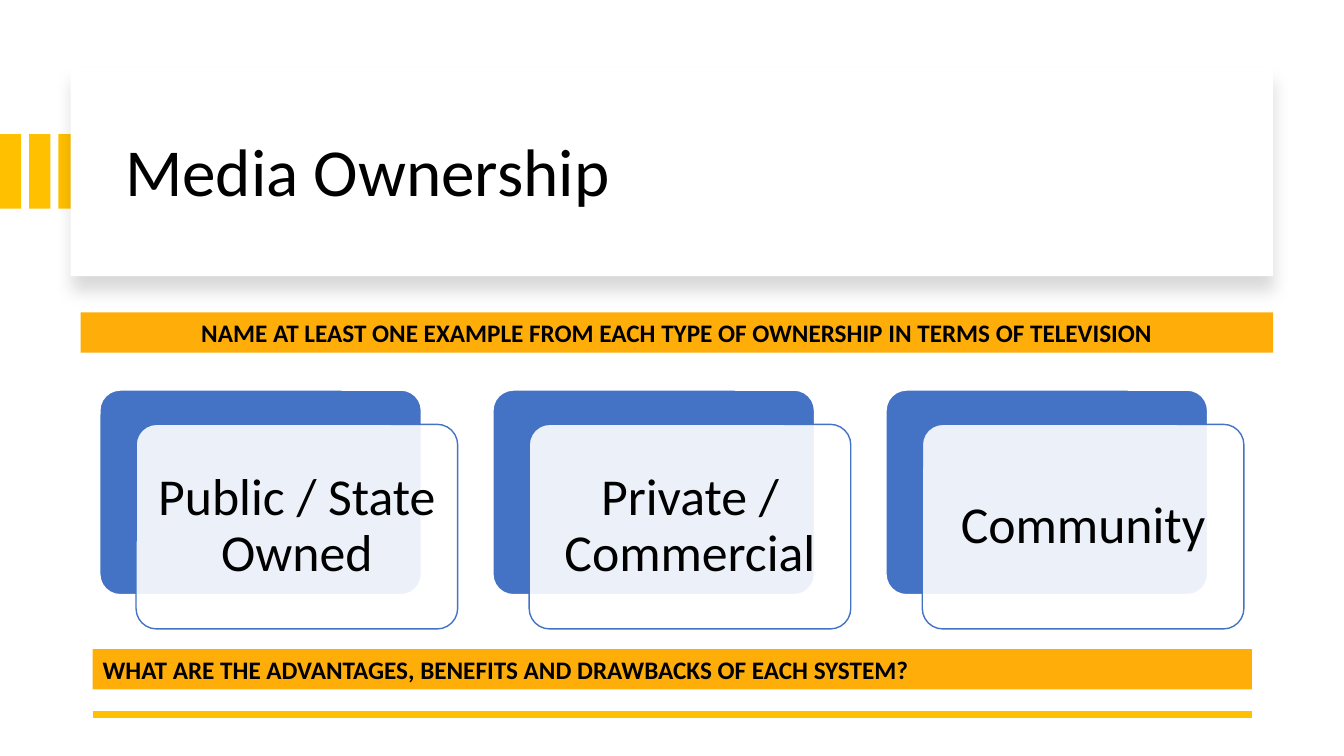
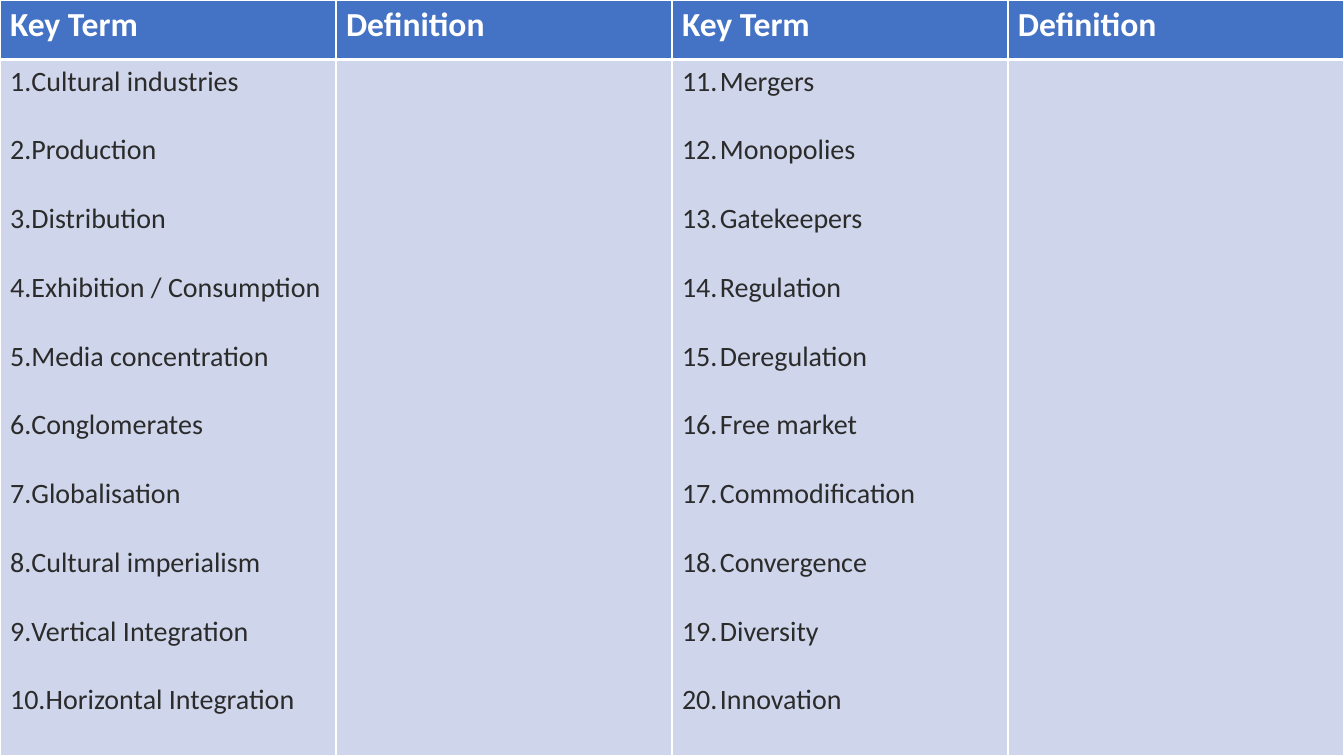
from lxml.etree import SubElement
from pptx import Presentation
from pptx.dml.color import RGBColor
from pptx.enum.shapes import MSO_CONNECTOR, MSO_SHAPE
from pptx.enum.text import MSO_ANCHOR, MSO_AUTO_SIZE, PP_ALIGN
from pptx.oxml.ns import qn
from pptx.util import Inches, Pt

FONT = "Calibri"
COLORS = {
    "white": "FFFFFF",
    "black": "000000",
    "gold": "FFC000",
    "amber": "FFAD09",
    "blue": "4472C4",
    "pale_blue": "CFD5EA",
    "charcoal": "2B2B2B",
}
SLIDE_WIDTH, SLIDE_HEIGHT = 40 / 3, 7.5

OWNERSHIP_TYPES = ["Public / State Owned", "Private / Commercial", "Community"]
HEADINGS = ["Key Term", "Definition"] * 2
KEY_TERMS = [
    "Cultural industries", "Production", "Distribution",
    "Exhibition / Consumption", "Media concentration", "Conglomerates",
    "Globalisation", "Cultural imperialism", "Vertical Integration",
    "Horizontal Integration", "Mergers", "Monopolies", "Gatekeepers",
    "Regulation", "Deregulation", "Free market", "Commodification",
    "Convergence", "Diversity", "Innovation",
]


def rgb(name):
    return RGBColor.from_string(COLORS[name])


def add_xml(parent, tag, **attributes):
    """Append a DrawingML child element."""
    return SubElement(parent, qn(tag), {key: str(value) for key, value in attributes.items()})


def number_paragraph(paragraph, start, hanging):
    """Number a paragraph, with its hanging indent in points."""
    properties = paragraph._p.get_or_add_pPr()
    properties.set("marL", str(Pt(hanging)))
    properties.set("indent", str(-Pt(hanging)))
    add_xml(properties, "a:buAutoNum", type="arabicPeriod", startAt=start)


def write_text(frame, text, size=18, color="black", bold=False,
               align=PP_ALIGN.LEFT, line_spacing=None, gap=0,
               number_from=None, hanging=0):
    """Write one paragraph, or a list of paragraphs, into a text frame."""
    frame.word_wrap = True
    lines = [text] if isinstance(text, str) else text
    for index, line in enumerate(lines):
        paragraph = frame.add_paragraph() if index else frame.paragraphs[0]
        if number_from:
            number_paragraph(paragraph, number_from, hanging)
        paragraph.alignment = align
        if line_spacing:
            paragraph.line_spacing = line_spacing
        if index and gap:
            paragraph.space_before = Pt(gap)
        run = paragraph.add_run()
        run.text = line
        run.font.name = FONT
        run.font.size = Pt(size)
        run.font.bold = bold
        run.font.color.rgb = rgb(color)


def add_box(slide, left, top, width, height, fill, line=None,
            kind=MSO_SHAPE.RECTANGLE):
    shape = slide.shapes.add_shape(
        kind, Inches(left), Inches(top), Inches(width), Inches(height))
    shape.shadow.inherit = False
    shape.fill.solid()
    shape.fill.fore_color.rgb = rgb(fill)
    if line:
        shape.line.color.rgb = rgb(line)
        shape.line.width = Pt(1)
    else:
        shape.line.fill.background()
    return shape


def set_alpha(color_element, percent):
    add_xml(color_element, "a:alpha", val=percent * 1000)


def add_title(slide, text):
    """Title on a white panel with a soft shadow below it."""
    panel = add_box(slide, 0.7, 0.67, 11.93, 2.07, "white")
    effects = panel._element.spPr.find(qn("a:effectLst"))
    shadow = add_xml(effects, "a:outerShdw", blurRad=Pt(11), dist=Pt(10),
                     dir=90 * 60000, algn="t", rotWithShape=0)
    set_alpha(add_xml(shadow, "a:srgbClr", val=COLORS["black"]), 15)

    title = slide.shapes.title
    title.left, title.top = Inches(1.14), Inches(0.88)
    title.width, title.height = Inches(11.13), Inches(1.7)
    title.text_frame.auto_size = MSO_AUTO_SIZE.NONE
    title.text_frame.vertical_anchor = MSO_ANCHOR.MIDDLE
    write_text(title.text_frame, text, size=48, line_spacing=0.9)
    slide.shapes._spTree.append(title._element)  # bring in front of the panel


def add_band(slide, left, top, width, text, align=PP_ALIGN.LEFT):
    band = add_box(slide, left, top, width, 0.4, "amber")
    band.text_frame.vertical_anchor = MSO_ANCHOR.MIDDLE
    write_text(band.text_frame, text, bold=True, align=align)


def add_rule(slide, left, right, top):
    rule = slide.shapes.add_connector(
        MSO_CONNECTOR.STRAIGHT, Inches(left), Inches(top), Inches(right), Inches(top))
    rule.line.color.rgb = rgb("gold")
    rule.line.width = Pt(4.5)
    add_xml(rule._element.spPr, "a:effectLst")


def add_layered_card(slide, left, top, text):
    """Blue card with a translucent labelled card shifted over it."""
    width, height = 3.19, 2.03
    back = add_box(slide, left, top, width, height, "blue", "white",
                   MSO_SHAPE.ROUNDED_RECTANGLE)
    front = add_box(slide, left + 0.36, top + 0.34, width, height, "white", "blue",
                    MSO_SHAPE.ROUNDED_RECTANGLE)
    for card in (back, front):
        card.adjustments[0] = 0.1
    set_alpha(front._element.spPr.find(qn("a:solidFill"))[0], 90)
    frame = front.text_frame
    frame.margin_left = frame.margin_right = Inches(0.14)
    frame.vertical_anchor = MSO_ANCHOR.MIDDLE
    write_text(frame, text, size=37, align=PP_ALIGN.CENTER, line_spacing=0.9)


def format_cell(cell, fill, top=1, bottom=1):
    """White borders (widths in points) and a solid fill."""
    properties = cell._tc.get_or_add_tcPr()
    for side, width in (("L", 1), ("R", 1), ("T", top), ("B", bottom)):
        border = add_xml(properties, f"a:ln{side}", w=Pt(width))
        add_xml(add_xml(border, "a:solidFill"), "a:srgbClr", val=COLORS["white"])
    cell.fill.solid()
    cell.fill.fore_color.rgb = rgb(fill)


def add_terms_table(slide):
    table = slide.shapes.add_table(
        2, len(HEADINGS), 0, 0, Inches(SLIDE_WIDTH), Inches(SLIDE_HEIGHT)).table
    table.horz_banding = False
    table.rows[0].height, table.rows[1].height = Inches(0.59), Inches(6.91)
    for column, heading in enumerate(HEADINGS):
        header, body = table.cell(0, column), table.cell(1, column)
        format_cell(header, "blue", bottom=3)
        format_cell(body, "pale_blue", top=3)
        write_text(header.text_frame, heading, size=24, color="white", bold=True)

    # Each term column holds half of the numbered list
    half = len(KEY_TERMS) // 2
    for column, first, hanging in ((0, 0, 0), (2, half, 27)):
        write_text(table.cell(1, column).text_frame, KEY_TERMS[first:first + half],
                   size=20, color="charcoal", gap=24.6,
                   number_from=first + 1, hanging=hanging)


def build_ownership_slide(presentation):
    slide = presentation.slides.add_slide(presentation.slide_layouts[5])
    # Accent bars running under the title panel
    for index in range(3):
        add_box(slide, index * 0.29, 1.33, 0.21, 0.74, "gold")
    add_title(slide, "Media Ownership")
    add_rule(slide, 0.92, 12.42, 7.09)
    for index, label in enumerate(OWNERSHIP_TYPES):
        add_layered_card(slide, 0.99 + index * 3.9, 3.87, label)
    add_band(slide, 0.92, 6.44, 11.5,
             "WHAT ARE THE ADVANTAGES, BENEFITS AND DRAWBACKS OF EACH SYSTEM?")
    add_band(slide, 0.8, 3.1, 11.83,
             "NAME AT LEAST ONE EXAMPLE FROM EACH TYPE OF OWNERSHIP IN TERMS OF TELEVISION",
             align=PP_ALIGN.CENTER)


def build_terms_slide(presentation):
    slide = presentation.slides.add_slide(presentation.slide_layouts[6])
    add_terms_table(slide)


def main():
    presentation = Presentation()
    presentation.slide_width = Inches(SLIDE_WIDTH)
    presentation.slide_height = Inches(SLIDE_HEIGHT)
    build_ownership_slide(presentation)
    build_terms_slide(presentation)
    presentation.save("out.pptx")


if __name__ == "__main__":
    main()
